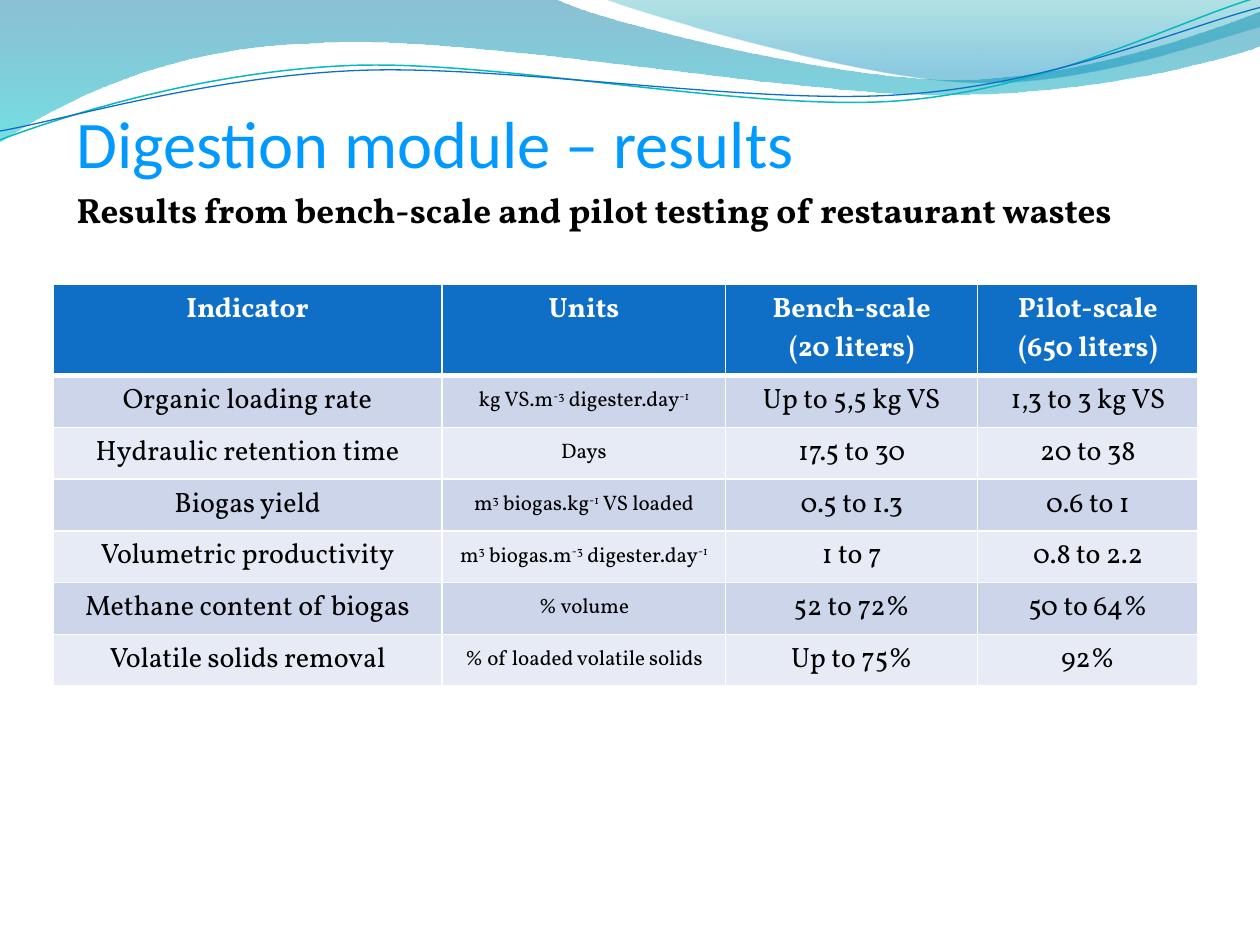
import dataclasses
import math
import typing

import lxml.etree
import pptx
import pptx.dml.color
import pptx.enum.text
import pptx.oxml.ns
import pptx.util

Inches = pptx.util.Inches
Pt = pptx.util.Pt
qn = pptx.oxml.ns.qn
Point = tuple[float, float]


@dataclasses.dataclass(frozen=True)
class Theme:
    serif: str = "Vollkorn"
    sans: str = "Calibri"
    sky: str = "0099FF"
    blue: str = "0F6FC6"
    teal: str = "0AB8BF"
    black: str = "000000"
    white: str = "FFFFFF"
    bands: tuple[str, str] = ("CCD5EA", "E7EBF5")
    title: int = 38
    lead: int = 20
    body: int = 16
    unit: int = 12


class Stop(typing.NamedTuple):
    place: float
    color: str
    alpha: int


@dataclasses.dataclass(frozen=True)
class Wave:
    """Outline whose steps hold one point (line) or three (curve)."""
    start: Point
    steps: list[tuple[Point, ...]]
    stops: tuple[Stop, ...] = ()
    color: str = ""
    width: float = 0
    turn: float = 0
    mid: Point = (0, 0)


class Row(typing.NamedTuple):
    name: str
    unit: str  # text between carets is raised
    bench: str
    pilot: str


THEME = Theme()

WAVES = [
    Wave((0, 0), [
        ((4.4, -0.01),),
        ((4.76, 0.17), (6.64, 0.63), (7.58, 0.63)),
        ((8.53, 0.63), (9.58, 0.26), (10, 0.09)),
        ((10.01, 0.36),),
        ((9.83, 0.44), (8.7, 0.76), (7.46, 0.75)),
        ((6.22, 0.75), (3.82, 0.28), (2.57, 0.34)),
        ((1.29, 0.36), (0.46, 0.83), (-0.01, 1.13)),
        ((0, 0),),
    ], stops=(Stop(0, "0074A1", 45), Stop(1, "00C6CF", 55))),
    Wave((4.79, -0.01), [
        ((5.09, 0.11), (6.82, 0.62), (7.69, 0.65)),
        ((8.56, 0.69), (9.61, 0.32), (10, 0.21)),
        ((10, 0),),
        ((4.79, -0.01),),
    ], stops=(Stop(0, "00A1A9", 30), Stop(0.8, "008BBF", 45))),
    Wave((0, 1.11), [
        ((0.48, 0.93), (1.58, 0.57), (2.77, 0.52)),
        ((3.95, 0.47), (5.93, 0.89), (7.13, 0.8)),
        ((8.33, 0.71), (9.38, 0.15), (9.98, -0.02)),
    ], color=THEME.teal, width=0.85, turn=-2.7, mid=(4.99, 0.58)),
    Wave((0, 1.04), [
        ((0.47, 0.96), (1.64, 0.61), (2.83, 0.56)),
        ((4.03, 0.51), (5.97, 0.84), (7.17, 0.75)),
        ((8.36, 0.67), (9.41, 0.21), (10, 0.06)),
    ], color=THEME.blue, width=0.75, turn=-2.7, mid=(5, 0.59)),
]

HEAD = Row("Indicator", "Units", "Bench-scale\n(20 liters)", "Pilot-scale\n(650 liters)")
ROWS = [
    Row("Organic loading rate", "kg VS.m^-3^ digester.day^-1^", "Up to 5,5 kg VS", "1,3 to 3 kg VS"),
    Row("Hydraulic retention time", "Days", "17.5 to 30", "20 to 38"),
    Row("Biogas yield", "m^3^ biogas.kg^-1^ VS loaded", "0.5 to 1.3", "0.6 to 1"),
    Row("Volumetric productivity", "m^3^ biogas.m^-3^ digester.day^-1^", "1 to 7", "0.8 to 2.2"),
    Row("Methane content of biogas", "% volume", "52 to 72%", "50 to 64%"),
    Row("Volatile solids removal", "% of loaded volatile solids", "Up to 75%", "92%"),
]
WIDTHS = (3.09, 2.25, 2, 1.75)


def rgb(color: str) -> pptx.dml.color.RGBColor:
    return pptx.dml.color.RGBColor.from_string(color)


def add_run(para, text: str, color: str, **form) -> typing.Any:
    run = para.add_run()
    run.text = text
    for key, value in form.items():
        setattr(run.font, key, value)
    run.font.color.rgb = rgb(color)
    return run


def unturn(point: Point, wave: Wave) -> Point:
    """Undo the turn that the finished shape will receive."""
    angle = math.radians(-wave.turn)
    x, y = point[0] - wave.mid[0], point[1] - wave.mid[1]
    return (Inches(wave.mid[0] + x * math.cos(angle) - y * math.sin(angle)),
            Inches(wave.mid[1] + x * math.sin(angle) + y * math.cos(angle)))


def draw_wave(slide, wave: Wave) -> None:
    pen = slide.shapes.build_freeform(*unturn(wave.start, wave), scale=1.0)
    pen.add_line_segments([unturn(point, wave) for step in wave.steps for point in step],
                          close=bool(wave.stops))
    shape = pen.convert_to_shape()
    shape.shadow.inherit = False
    shape.rotation = wave.turn
    # Join each three segments of a curve into one Bezier
    lines = iter(list(shape._element.iter(qn("a:lnTo"))))
    for step in wave.steps:
        first, *rest = [next(lines) for _ in step]
        if rest:
            first.addprevious(curve := lxml.etree.Element(qn("a:cubicBezTo")))
            for line in (first, *rest):
                curve.append(line[0])
                line.getparent().remove(line)
    if not wave.stops:
        shape.fill.background()
        shape.line.color.rgb = rgb(wave.color)
        shape.line.width = Pt(wave.width)
        return
    shape.line.fill.background()
    shape.fill.gradient()
    shape.fill.gradient_angle = 270
    for mark, stop in zip(shape.fill.gradient_stops, wave.stops):
        mark.position = stop.place
        mark.color.rgb = rgb(stop.color)
    for node, stop in zip(shape._element.iter(qn("a:srgbClr")), wave.stops):
        lxml.etree.SubElement(node, qn("a:alpha"), val=str(stop.alpha * 1000))


def add_edges(cell, base: float) -> None:
    props = cell._tc.get_or_add_tcPr()
    for side, width in zip("LRTB", (1, 1, 1, base)):
        edge = lxml.etree.SubElement(props, qn(f"a:ln{side}"), w=str(Pt(width)))
        fill = lxml.etree.SubElement(edge, qn("a:solidFill"))
        lxml.etree.SubElement(fill, qn("a:srgbClr"), val=THEME.white)


def fill_cell(cell, text: str, fill: str, color: str, size: int, head: bool) -> None:
    add_edges(cell, 3 if head else 1)
    cell.fill.solid()
    cell.fill.fore_color.rgb = rgb(fill)
    anchor = pptx.enum.text.MSO_ANCHOR
    cell.vertical_anchor = anchor.TOP if head else anchor.MIDDLE
    for i, line in enumerate(text.split("\n")):
        para = cell.text_frame.add_paragraph() if i else cell.text_frame.paragraphs[0]
        para.alignment = pptx.enum.text.PP_ALIGN.CENTER
        for j, part in enumerate(line.split("^")):
            if part:
                run = add_run(para, part, color, name=THEME.serif, size=Pt(size), bold=head)
                if j % 2:
                    run.font._element.set("baseline", "30000")


def draw_table(slide) -> None:
    high = 0.41
    count = len(ROWS) + 1
    table = slide.shapes.add_table(count, len(WIDTHS), Inches(0.42), Inches(2.26),
                                   Inches(sum(WIDTHS)), Inches(high * count)).table
    table.horz_banding = False
    for col, width in zip(table.columns, WIDTHS):
        col.width = Inches(width)
    for r, row in enumerate([HEAD, *ROWS]):
        head = r == 0
        table.rows[r].height = Inches(high)
        fill = THEME.blue if head else THEME.bands[(r - 1) % 2]
        color = THEME.white if head else THEME.black
        for c, text in enumerate(row):
            size = THEME.unit if c == 1 and not head else THEME.body
            fill_cell(table.cell(r, c), text, fill, color, size, head)


def draw_title(slide) -> None:
    frame = slide.shapes.add_textbox(Inches(0.51), Inches(0.76), Inches(9.33), Inches(1.34)).text_frame
    frame.word_wrap = True
    title, lead = frame.paragraphs[0], frame.add_paragraph()
    for para in (title, lead):
        props = para._p.get_or_add_pPr()
        for key, value in {"marL": 0.3, "indent": -0.3}.items():
            props.set(key, str(Inches(value)))
    lead.space_before = Pt(4)
    add_run(title, "Digestion module – results", THEME.sky, name=THEME.sans, size=Pt(THEME.title))
    add_run(lead, "Results from bench-scale and pilot testing of restaurant wastes",
            THEME.black, name=THEME.serif, size=Pt(THEME.lead), bold=True)


def main() -> None:
    deck = pptx.Presentation()
    deck.slide_width, deck.slide_height = Inches(10), Inches(7.5)
    slide = deck.slides.add_slide(deck.slide_layouts[6])
    # Waves along the top edge
    for wave in WAVES:
        draw_wave(slide, wave)
    # Results and heading
    draw_table(slide)
    draw_title(slide)
    deck.save("out.pptx")


if __name__ == "__main__":
    main()
